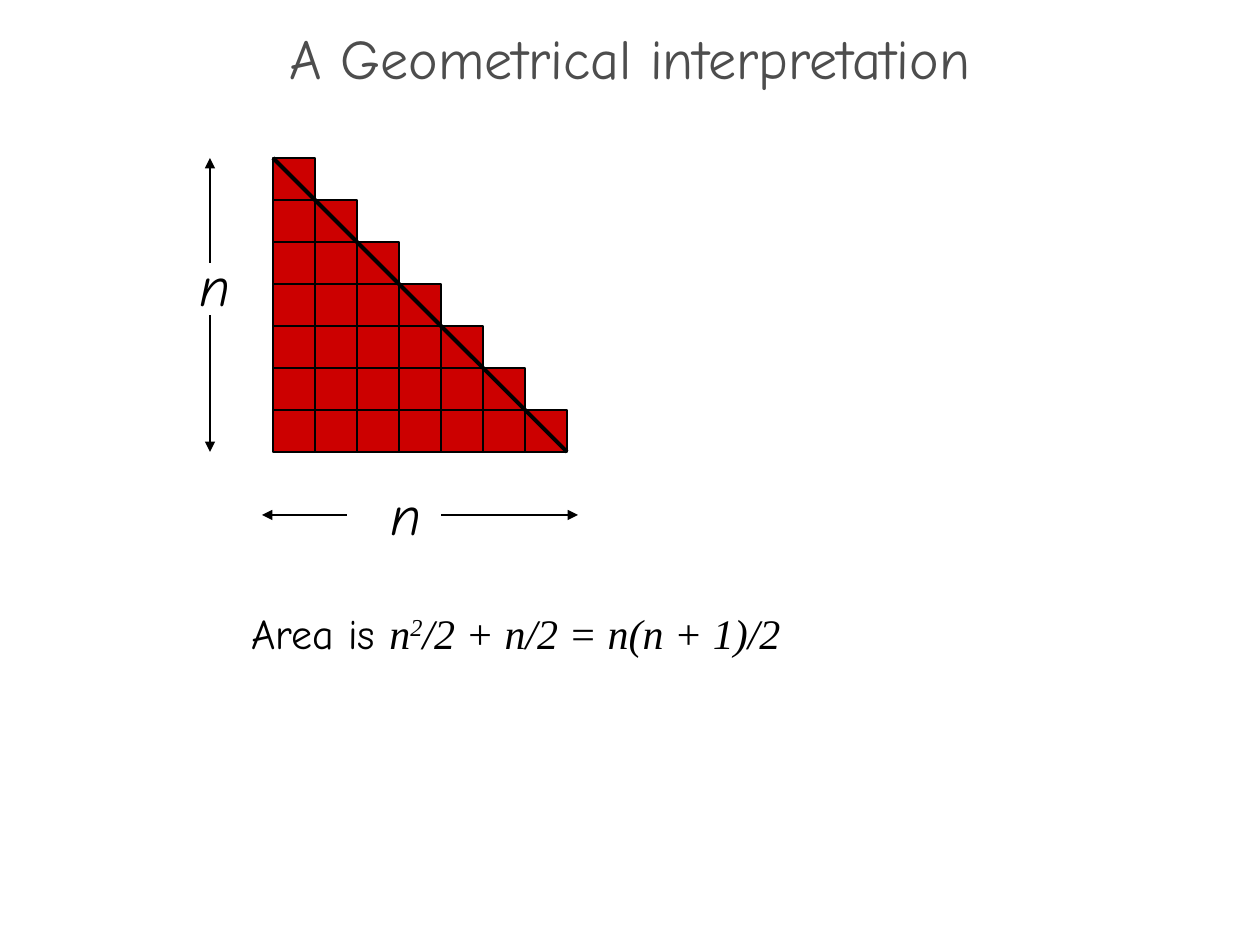
from lxml.etree import SubElement
from pptx import Presentation
from pptx.dml.color import RGBColor
from pptx.enum.shapes import MSO_CONNECTOR, MSO_SHAPE
from pptx.enum.text import MSO_ANCHOR, PP_ALIGN
from pptx.oxml.ns import qn
from pptx.util import Emu, Pt

RED = RGBColor(0xCC, 0x00, 0x00)
BLACK = RGBColor(0x00, 0x00, 0x00)
GRAY = RGBColor(0x4D, 0x4D, 0x4D)
SANS = "Comic Neue"
SERIF = "Times New Roman"
STEPS = 7
CELL = 42


def px(length):
    """Turn px at 126 to the inch into EMU."""
    return Emu(round(length * 914400 / 126))


def add_span(para, text, size=24, font=SANS, color=BLACK, italic=False, raised=None):
    """Append one formatted run to a paragraph."""
    span = para.add_run()
    span.text = text
    span.font.size = Pt(size)
    span.font.name = font
    span.font.color.rgb = color
    span.font.italic = italic
    if raised:
        span.font._element.set("baseline", str(raised * 1000))


def add_text_box(page, left, top, width, height):
    """Add an unwrapped text box and return its first paragraph."""
    box = page.shapes.add_textbox(px(left), px(top), px(width), px(height))
    box.text_frame.word_wrap = False
    return box.text_frame.paragraphs[0]


def add_line(page, start, end, weight=0.75, arrow=False):
    """Draw a black straight line, with an optional arrowhead at its end."""
    line = page.shapes.add_connector(
        MSO_CONNECTOR.STRAIGHT, *(px(value) for value in (*start, *end)))
    line.line.color.rgb = BLACK
    line.line.width = Pt(weight)
    if arrow:
        SubElement(line.line._get_or_add_ln(), qn("a:tailEnd"), type="triangle")
    SubElement(line._element.spPr, qn("a:effectLst"))


def add_title(page, left, top, width, height):
    """Place and format the slide title."""
    title = page.shapes.title
    title.left, title.top, title.width, title.height = map(px, (left, top, width, height))
    title.text_frame.vertical_anchor = MSO_ANCHOR.MIDDLE
    para = title.text_frame.paragraphs[0]
    para.alignment = PP_ALIGN.CENTER
    para.line_spacing = 0.7
    add_span(para, "A Geometrical interpretation", size=32, color=GRAY)


def add_staircase(page, left, top):
    """Stack the squares in descending columns."""
    for column in range(STEPS):
        for row in range(column, STEPS):
            square = page.shapes.add_shape(
                MSO_SHAPE.RECTANGLE, px(left + column * CELL), px(top + row * CELL),
                px(CELL), px(CELL))
            square.shadow.inherit = False
            square.fill.solid()
            square.fill.fore_color.rgb = RED
            square.line.color.rgb = BLACK
            square.line.width = Pt(0.75)


def add_dimensions(page, left, top):
    """Mark the height and the width of the staircase as n."""
    side = STEPS * CELL
    for label_left, label_top in ((left - 86, top + 86), (left + 105, top + side + 21)):
        para = add_text_box(page, label_left, label_top, 53, 79)
        add_span(para, "n", size=32, italic=True)
    across, down = top + side + 63, left - 63
    add_line(page, (left + 74, across), (left - 11, across), arrow=True)
    add_line(page, (left + 168, across), (left + side + 11, across), arrow=True)
    add_line(page, (down, top + 105), (down, top), arrow=True)
    add_line(page, (down, top + 157), (down, top + side), arrow=True)


def add_figure(page, left, top):
    """Draw the staircase with its dimensions and diagonal."""
    side = STEPS * CELL
    add_staircase(page, left, top)
    add_dimensions(page, left, top)
    add_line(page, (left, top), (left + side, top + side), weight=2.25)


def add_formula(page, left, top, width, height):
    """Write the area formula."""
    para = add_text_box(page, left, top, width, height)
    add_span(para, "Area is ")
    add_span(para, "n", font=SERIF, italic=True)
    add_span(para, "2", font=SERIF, italic=True, raised=30)
    add_span(para, "/2 + n/2 = n(n + 1)/2", font=SERIF, italic=True)


def main():
    """Build and save the deck."""
    deck = Presentation()
    deck.slide_width, deck.slide_height = px(1260), px(945)
    page = deck.slides.add_slide(deck.slide_layouts[5])
    add_figure(page, 273, 158)
    add_formula(page, 239, 601, 590, 63)
    add_title(page, 0, 34, 1260, 63)
    deck.save("out.pptx")


if __name__ == "__main__":
    main()
